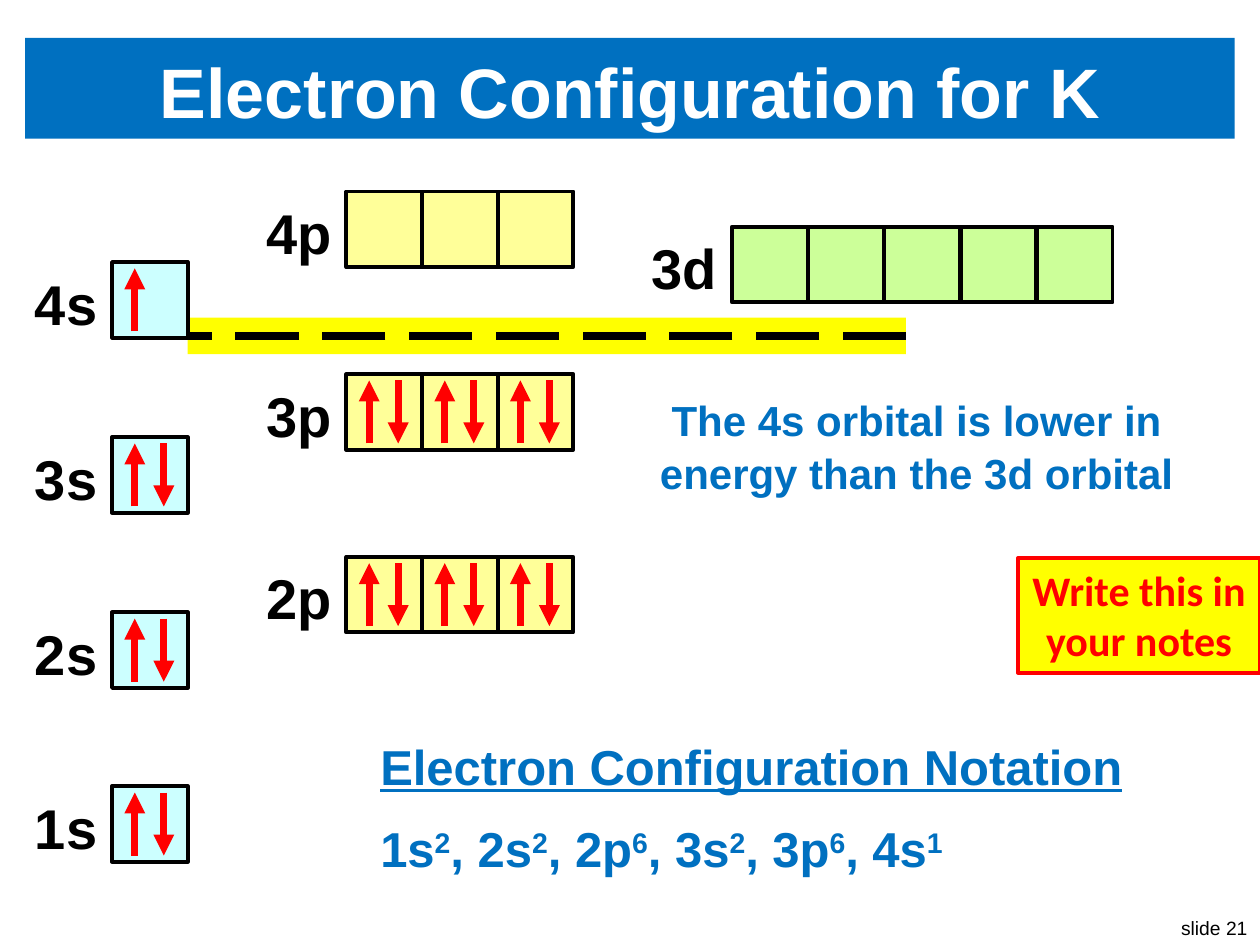
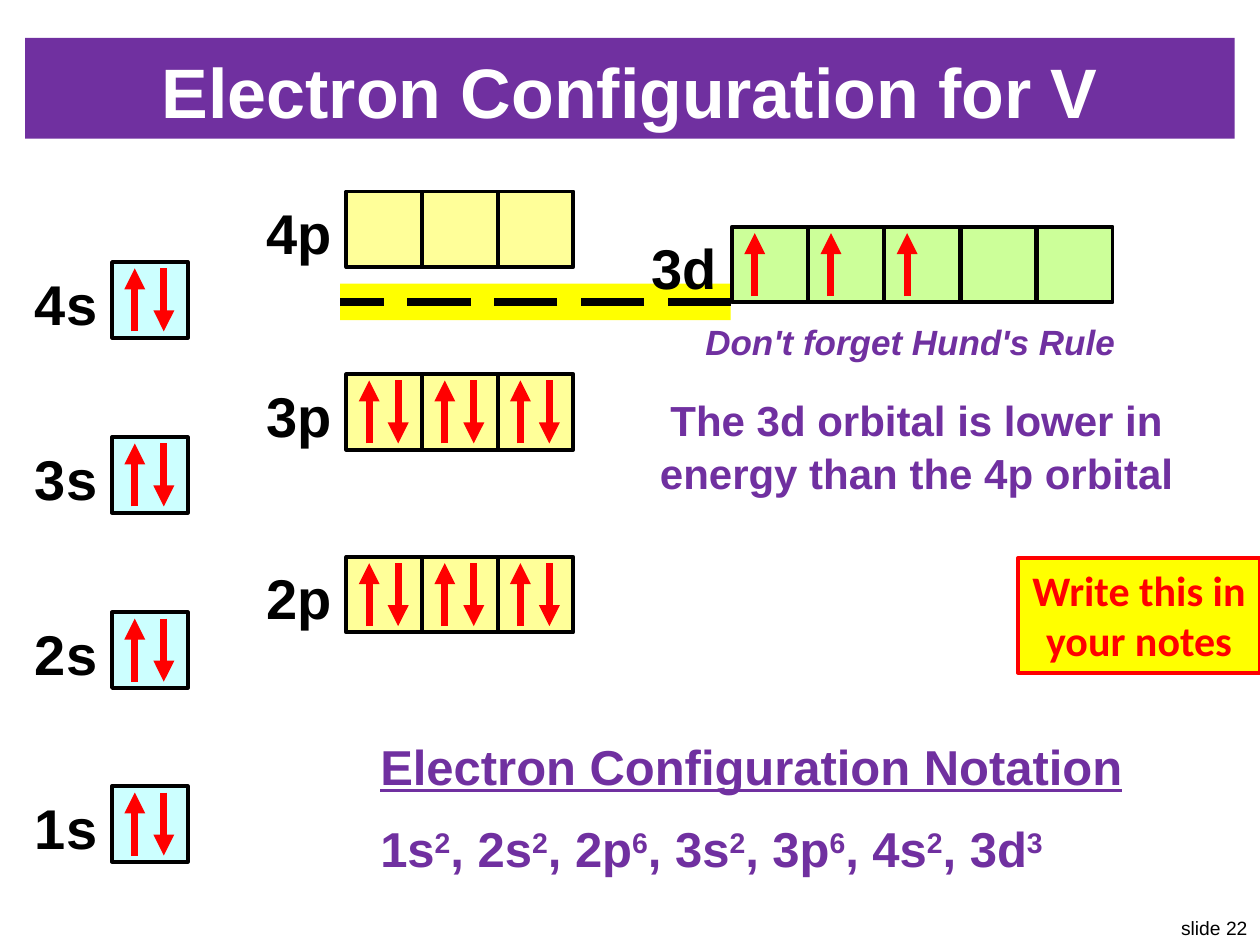
"""Build two slides with orbital diagrams for the electron configurations of K and V."""
from lxml.etree import SubElement
from pptx import Presentation
from pptx.dml.color import RGBColor
from pptx.enum.dml import MSO_LINE
from pptx.enum.shapes import MSO_CONNECTOR, MSO_SHAPE
from pptx.enum.text import MSO_ANCHOR, PP_ALIGN
from pptx.oxml.ns import qn
from pptx.util import Inches, Pt

COLORS = {
    "black": "000000", "white": "FFFFFF", "red": "FF0000", "yellow": "FFFF00",
    "blue": "0070C0", "purple": "7030A0",
    "s": "CCFFFF", "p": "FFFF99", "d": "CCFF99",
}
BOX = 0.6
BOX_COUNT = {"s": 1, "p": 3, "d": 5}
PITCH = {"s": BOX, "p": BOX, "d": 2.42 / 4}
ORBITALS = {
    "1s": (0.89, 6.24), "2s": (0.89, 4.86), "3s": (0.89, 3.47), "4s": (0.89, 2.08),
    "2p": (2.75, 4.42), "3p": (2.75, 2.97), "4p": (2.75, 1.52), "3d": (5.81, 1.8),
}
ARGON = {"1s": 2, "2s": 2, "2p": 6, "3s": 2, "3p": 6}
SLIDES = [
    {"element": "K", "accent": "blue", "number": 21, "electrons": {**ARGON, "4s": 1},
     "band": (1.49, 2.52, 5.7), "lower": "4s", "higher": "3d", "hint": None},
    {"element": "V", "accent": "purple", "number": 22, "electrons": {**ARGON, "4s": 2, "3d": 3},
     "band": (2.7, 2.25, 3.1), "lower": "3d", "higher": "4p", "hint": "Don't forget Hund's Rule"},
]
LEFT, CENTER, RIGHT = PP_ALIGN.LEFT, PP_ALIGN.CENTER, PP_ALIGN.RIGHT


def add_box(s, pos, paragraphs=(), fill=None, line=None, color="black", align=CENTER,
            wrap=True, spacing=1.05, anchor=MSO_ANCHOR.TOP, **font):
    """Add a rectangle, or a text box when it has no fill; paragraphs hold (text, format) runs."""
    box = [Inches(v) for v in pos]
    if fill:
        sp = s.shapes.add_shape(MSO_SHAPE.RECTANGLE, *box)
        sp.shadow.inherit = False
        sp.fill.solid()
        sp.fill.fore_color.rgb = RGBColor.from_string(COLORS[fill])
        if line:
            sp.line.color.rgb = RGBColor.from_string(COLORS[line])
            sp.line.width = Pt(2.25)
        else:
            sp.line.fill.background()
    else:
        sp = s.shapes.add_textbox(*box)
    tf = sp.text_frame
    tf.word_wrap = wrap
    tf.vertical_anchor = anchor
    for i, runs in enumerate(paragraphs):
        p = tf.add_paragraph() if i else tf.paragraphs[0]
        p.alignment = align
        p.line_spacing = spacing
        p.space_after = Pt(12 if i < len(paragraphs) - 1 else 0)
        for text, extra in runs:
            r = p.add_run()
            r.text = text
            values = {"name": "Arial", "bold": True, **font, **extra}
            if values.pop("raised", False):
                r._r.get_or_add_rPr().set("baseline", "30000")
            for key, value in values.items():
                setattr(r.font, key, value)
            r.font.color.rgb = RGBColor.from_string(COLORS[color])


def add_line(s, start, end, color, width, dash=None, arrow=False):
    """Add a straight line, dashed or with an arrowhead at its end."""
    ln = s.shapes.add_connector(MSO_CONNECTOR.STRAIGHT, *[Inches(v) for v in (*start, *end)])
    ln.line.color.rgb = RGBColor.from_string(COLORS[color])
    ln.line.width = Pt(width)
    if dash:
        ln.line.dash_style = dash
    if arrow:
        SubElement(ln.line._get_or_add_ln(), qn("a:tailEnd"), type="triangle")
    SubElement(ln._element.spPr, qn("a:effectLst"))


prs = Presentation()
prs.slide_width, prs.slide_height = Inches(10), Inches(7.5)

for data in SLIDES:
    s = prs.slides.add_slide(prs.slide_layouts[6])
    accent, electrons = data["accent"], data["electrons"]

    add_box(s, (9.25, 7.21, 0.75, 0.29), [[(f"slide {data['number']}", {})]],
            align=RIGHT, wrap=False, size=Pt(11), bold=False)
    add_box(s, (0.2, 0.3, 9.6, 0.8), [[(f"Electron Configuration for {data['element']}", {})]],
            fill=accent, color="white", anchor=MSO_ANCHOR.MIDDLE, size=Pt(40))

    x, y, width = data["band"]
    add_box(s, (x, y, width, 0.29), fill="yellow")
    add_line(s, (x + width, y + 0.15), (x, y + 0.15), "black", 4.5, dash=MSO_LINE.LONG_DASH)

    for name, (x, y) in ORBITALS.items():
        kind = name[-1]
        count = BOX_COUNT[kind]
        add_box(s, (x - 0.74, y - 0.02, 0.72, 0.64), [[(name, {})]],
                align=RIGHT, wrap=False, size=Pt(32))
        for i in range(count):
            left = x + i * PITCH[kind]
            add_box(s, (left, y, BOX, BOX), fill=kind, line="black")
            up, down = left + 0.18, left + 0.41
            if electrons.get(name, 0) > i:
                add_line(s, (up, y + 0.55), (up, y + 0.05), "red", 4, arrow=True)
            if electrons.get(name, 0) > i + count:
                add_line(s, (down, y + 0.05), (down, y + 0.55), "red", 4, arrow=True)

    if data["hint"]:
        add_box(s, (5.49, 2.48, 3.47, 0.49), [[(data["hint"], {})]],
                color=accent, size=Pt(20), italic=True)
    rule = f"The {data['lower']} orbital is lower in energy than the {data['higher']} orbital"
    add_box(s, (5.07, 3.06, 4.41, 1.06), [[(rule, {})]], color=accent, size=Pt(24))

    notation = []
    for i, (name, number) in enumerate(electrons.items()):
        notation += [(f", {name}" if i else name, {}), (str(number), {"raised": True})]
    add_box(s, (2.92, 5.77, 6.16, 1.21),
            [[("Electron Configuration Notation", {"underline": True})], notation],
            color=accent, align=LEFT, wrap=False, size=Pt(28))
    add_box(s, (8.08, 4.43, 1.92, 0.91), [[("Write this in your notes", {})]],
            fill="yellow", line="red", color="red", spacing=1.0, name="Calibri", size=Pt(24))

prs.save("out.pptx")
